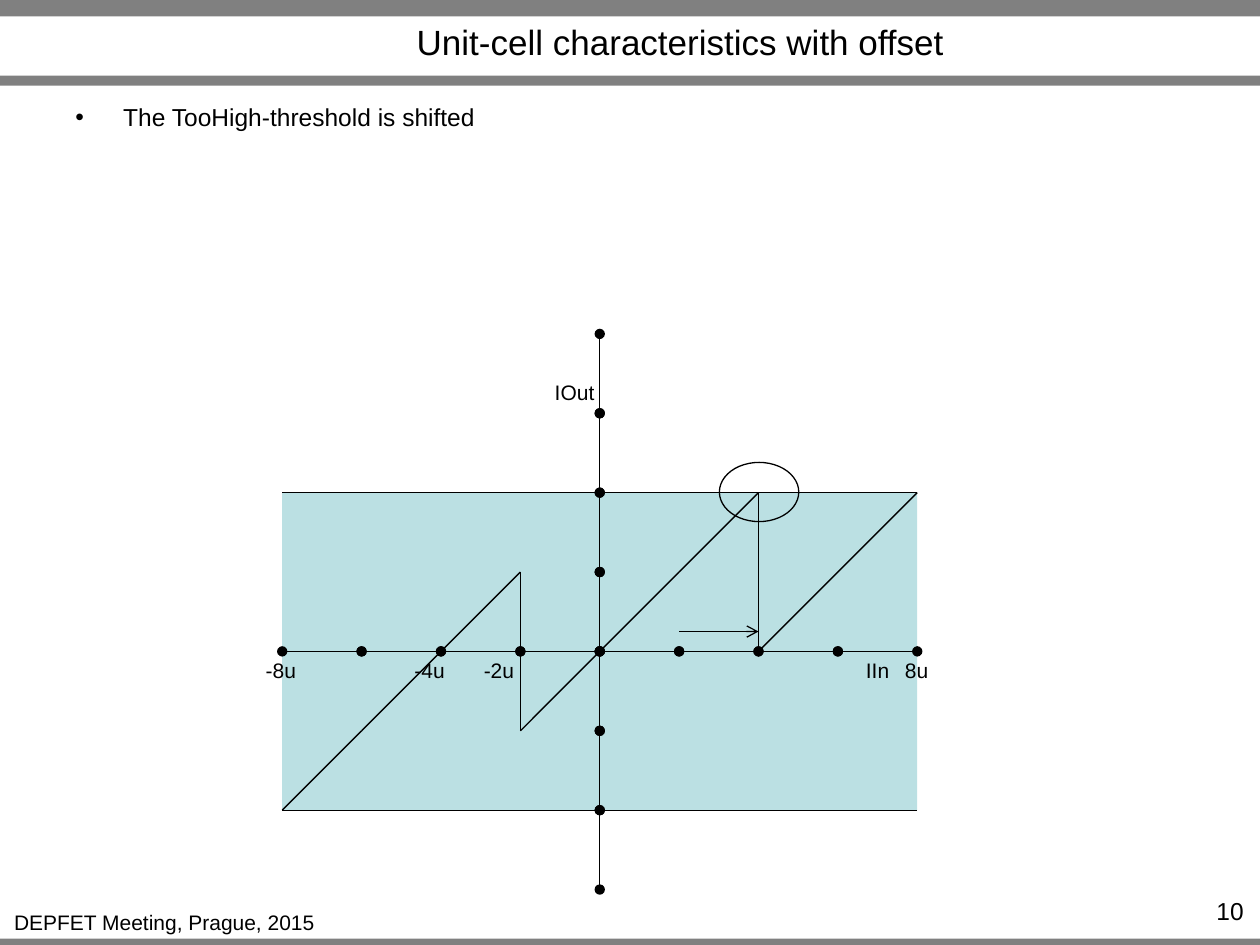
"""Build the slide on unit-cell characteristics with a shifted threshold."""
import itertools

import lxml.etree
import pptx
import pptx.dml.color
import pptx.enum.shapes
import pptx.enum.text
import pptx.oxml.ns
import pptx.util
from pptx.util import Inches

BLACK = pptx.dml.color.RGBColor(0x00, 0x00, 0x00)
GRAY = pptx.dml.color.RGBColor(0x80, 0x80, 0x80)
TEAL = pptx.dml.color.RGBColor(0xBB, 0xE0, 0xE3)
UNIT = 0.63
ORIGIN_X, ORIGIN_Y = 4.76, 5.17
SHAPE = pptx.enum.shapes.MSO_SHAPE
ALIGN = pptx.enum.text.PP_ALIGN
ANCHOR = pptx.enum.text.MSO_ANCHOR
qn = pptx.oxml.ns.qn

deck = pptx.Presentation()
deck.slide_width = Inches(10)
deck.slide_height = Inches(7.5)
slide = deck.slides.add_slide(deck.slide_layouts[5])


def write(box, text, size, align, anchor=ANCHOR.TOP, wrap=True):
    frame = box.text_frame
    frame.word_wrap = wrap
    frame.vertical_anchor = anchor
    frame.auto_size = (pptx.enum.text.MSO_AUTO_SIZE.NONE if wrap
                       else pptx.enum.text.MSO_AUTO_SIZE.SHAPE_TO_FIT_TEXT)
    para = frame.paragraphs[0]
    para.alignment = align
    span = para.add_run()
    span.text = text
    span.font.name = "Arial"
    span.font.size = pptx.util.Pt(size)
    span.font.color.rgb = BLACK
    return para


def draw_line(start, end, **arrowheads):
    ends = [Inches(value) for x, y in (start, end)
            for value in (ORIGIN_X + x * UNIT, ORIGIN_Y - y * UNIT)]
    line = slide.shapes.add_connector(pptx.enum.shapes.MSO_CONNECTOR.STRAIGHT, *ends)
    line.line.color.rgb = BLACK
    line.line.width = pptx.util.Pt(0.75)
    for tag, kind in arrowheads.items():
        lxml.etree.SubElement(line.line._get_or_add_ln(), qn(f"a:{tag}"), type=kind)
    lxml.etree.SubElement(line._element.spPr, qn("a:effectLst"))
    if start in band_sides:
        line.begin_connect(band, band_sides[start])
    if end in band_sides:
        line.end_connect(band, band_sides[end])


title = slide.shapes.title
title.left, title.top, title.width, title.height = map(Inches, (1.3, 0.14, 8.2, 0.38))
write(title, "Unit-cell characteristics with offset", 20, ALIGN.CENTER, ANCHOR.MIDDLE)

band_area = (2.24, 3.91, 8 * UNIT, 4 * UNIT)
for area, color in (((0, 7.45, 10, 0.08), GRAY), ((0, 0, 10, 0.13), GRAY),
                    ((0, 0.6, 10, 0.08), GRAY), (band_area, TEAL)):
    band = slide.shapes.add_shape(SHAPE.RECTANGLE, *map(Inches, area))
    band.shadow.inherit = False
    band.fill.solid()
    band.fill.fore_color.rgb = color
    band.line.fill.background()
band_sides = {(0, 2): 0, (-4, 0): 1, (0, -2): 2, (4, 0): 3}

page_number = slide.shapes.add_textbox(*map(Inches, (9.1, 7.06, 0.87, 0.24)))
write(page_number, "10", 14, ALIGN.RIGHT)

body = slide.shapes.add_textbox(*map(Inches, (0.5, 0.76, 9, 1.58)))
bullet = write(body, "The TooHigh-threshold is shifted", 14, ALIGN.LEFT)
properties = bullet._p.get_or_add_pPr()
properties.set("marL", str(Inches(0.38)))
properties.set("indent", str(Inches(-0.38)))
lxml.etree.SubElement(properties, qn("a:buFont"), typeface="Arial")
lxml.etree.SubElement(properties, qn("a:buChar"), char="•")

for step in range(-4, 4):
    draw_line((step, 0), (step + 1, 0), headEnd="oval", tailEnd="oval")
for step in range(-3, 4):
    draw_line((0, step + 1), (0, step), headEnd="oval", tailEnd="oval")

curve = [(-4, -2), (-3, -1), (-2, 0), (-1, 1), (-1, 0), (-1, -1),
         (0, 0), (1, 1), (2, 2), (2, 1), (2, 0), (4, 2)]
for start, end in itertools.pairwise(curve):
    draw_line(start, end)
for limit in (2, -2):
    draw_line((-4, limit), (4, limit))
draw_line((1, 0.25), (2, 0.25), tailEnd="arrow")

labels = [("DEPFET Meeting, Prague, 2015", 0, 7.17, 2.61),
          ("IIn", 6.77, 5.17, 0.39), ("IOut", 4.3, 2.96, 0.52),
          ("-2u", 3.74, 5.17, 0.44), ("-4u", 3.19, 5.17, 0.44),
          ("-8u", 2.01, 5.17, 0.44), ("8u", 7.08, 5.17, 0.39)]
for text, left, top, width in labels:
    label = slide.shapes.add_textbox(*map(Inches, (left, top, width, 0.3)))
    write(label, text, 12, ALIGN.CENTER, wrap=False)

threshold_ring = slide.shapes.add_shape(SHAPE.OVAL, *map(Inches, (5.71, 3.67, UNIT, 0.47)))
threshold_ring.shadow.inherit = False
threshold_ring.fill.background()
threshold_ring.line.color.rgb = BLACK
threshold_ring.line.width = pptx.util.Pt(0.75)

deck.save("out.pptx")
